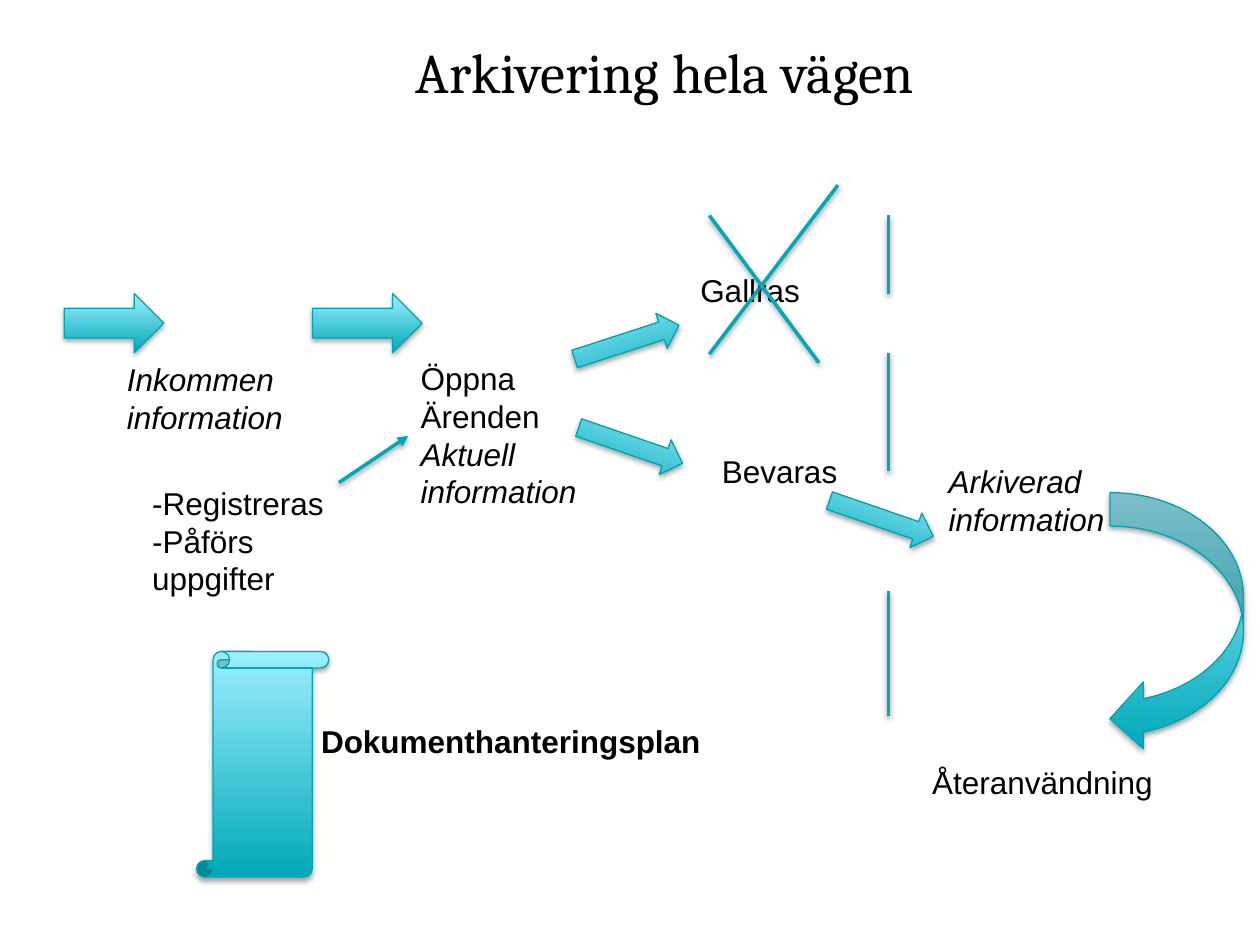
from pptx import Presentation
from pptx.dml.color import RGBColor
from pptx.enum.shapes import MSO_CONNECTOR as Link, MSO_SHAPE as Form
from pptx.enum.text import PP_ALIGN as Align
from pptx.oxml import parse_xml
from pptx.oxml.ns import nsdecls
from pptx.util import Inches, Pt


def color(code):
    return RGBColor.from_string(code)


def places(*nums):
    return [Inches(num) for num in nums]


class Board:
    font, size, ink = "Arial", 18, "000000"
    dark, light, edge = "00A9B8", "9DEFFF", "00A5B4"

    def __init__(self, slide):
        self.slide = slide

    def shade(self, item, dist, alpha):
        item._element.spPr.append(parse_xml(
            f'<a:effectLst {nsdecls("a")}><a:outerShdw blurRad="{Pt(3.1)}" '
            f'dist="{Pt(dist)}" dir="5400000" rotWithShape="0">'
            f'<a:srgbClr val="000000"><a:alpha val="{alpha * 1000}"/>'
            '</a:srgbClr></a:outerShdw></a:effectLst>'))

    def text(self, box, *lines, font=None, size=None, align=Align.LEFT):
        """Each line is a (words, style) pair; style holds b and/or i."""
        frame = self.slide.shapes.add_textbox(*places(*box)).text_frame
        frame.word_wrap = True
        for num, (words, style) in enumerate(lines):
            para = frame.add_paragraph() if num else frame.paragraphs[0]
            para.alignment = align
            run = para.add_run()
            run.text = words
            run.font.name = font or self.font
            run.font.size = Pt(size or self.size)
            run.font.color.rgb = color(self.ink)
            run.font.bold = "b" in style
            run.font.italic = "i" in style

    def shape(self, form, box, turn=0):
        item = self.slide.shapes.add_shape(form, *places(*box))
        item.rotation = turn
        item.fill.gradient()
        item.fill.gradient_angle = 90
        for stop, code in zip(item.fill.gradient_stops, (self.dark, self.light)):
            stop.color.rgb = color(code)
        item.line.color.rgb = color(self.edge)
        item.line.width = Pt(0.75)
        self.shade(item, 1.8, 35)

    def line(self, start, end, head=False):
        item = self.slide.shapes.add_connector(
            Link.STRAIGHT, *places(*start, *end))
        item.line.color.rgb = color(self.dark)
        item.line.width = Pt(2)
        if head:
            item.line._get_or_add_ln().append(
                parse_xml(f'<a:tailEnd {nsdecls("a")} type="triangle"/>'))
        self.shade(item, 1.6, 38)


def main():
    deck = Presentation()
    deck.slide_width, deck.slide_height = places(10, 7.5)
    board = Board(deck.slides.add_slide(deck.slide_layouts[6]))

    # Title
    board.text((1.03, 0.25, 8.5, 1.25), ("Arkivering hela vägen", ""),
               font="Cambria", size=32, align=Align.CENTER)

    # Incoming information
    board.text((0.91, 2.81, 1.57, 0.86), ("Inkommen information", "i"))
    board.text((1.11, 3.79, 1.96, 1.01),
               ("-Registreras", ""), ("-Påförs uppgifter", ""))
    for left, width in ((0.51, 0.79), (2.48, 0.87)):
        board.shape(Form.RIGHT_ARROW, (left, 2.33, width, 0.47))

    # Open cases
    board.text((3.24, 2.8, 1.81, 1.31), ("Öppna", ""), ("Ärenden", ""),
               ("Aktuell information", "i"))

    # Discarded, crossed out
    board.text((5.46, 2.1, 1.2, 0.4), ("Gallras", ""))
    board.line((6.65, 1.47), (5.63, 2.81))
    board.line((5.63, 1.71), (6.5, 2.88))

    # Kept and archived
    board.text((5.63, 3.54, 1.42, 0.4), ("Bevaras", ""))
    for top, end in ((1.71, 2.33), (2.8, 3.74), (4.69, 5.68)):
        board.line((7.05, top), (7.05, end))
    for left, top, turn in ((4.54, 2.57, 342), (4.57, 3.39, 19),
                            (6.56, 3.97, 19)):
        board.shape(Form.RIGHT_ARROW, (left, top, 0.87, 0.29), turn)
    board.text((7.43, 3.62, 2.12, 0.71), ("Arkiverad information", "i"))

    # Reuse
    board.shape(Form.CURVED_LEFT_ARROW, (8.81, 3.91, 1.06, 2.06))
    board.text((7.3, 6.01, 2.06, 0.4), ("Återanvändning", ""))
    board.line((2.69, 3.83), (3.24, 3.46), head=True)

    # Document plan
    board.shape(Form.VERTICAL_SCROLL, (1.56, 5.17, 1.05, 1.79))
    board.text((2.45, 5.68, 3.26, 0.4), ("Dokumenthanteringsplan", "b"))

    deck.save("out.pptx")


if __name__ == "__main__":
    main()
